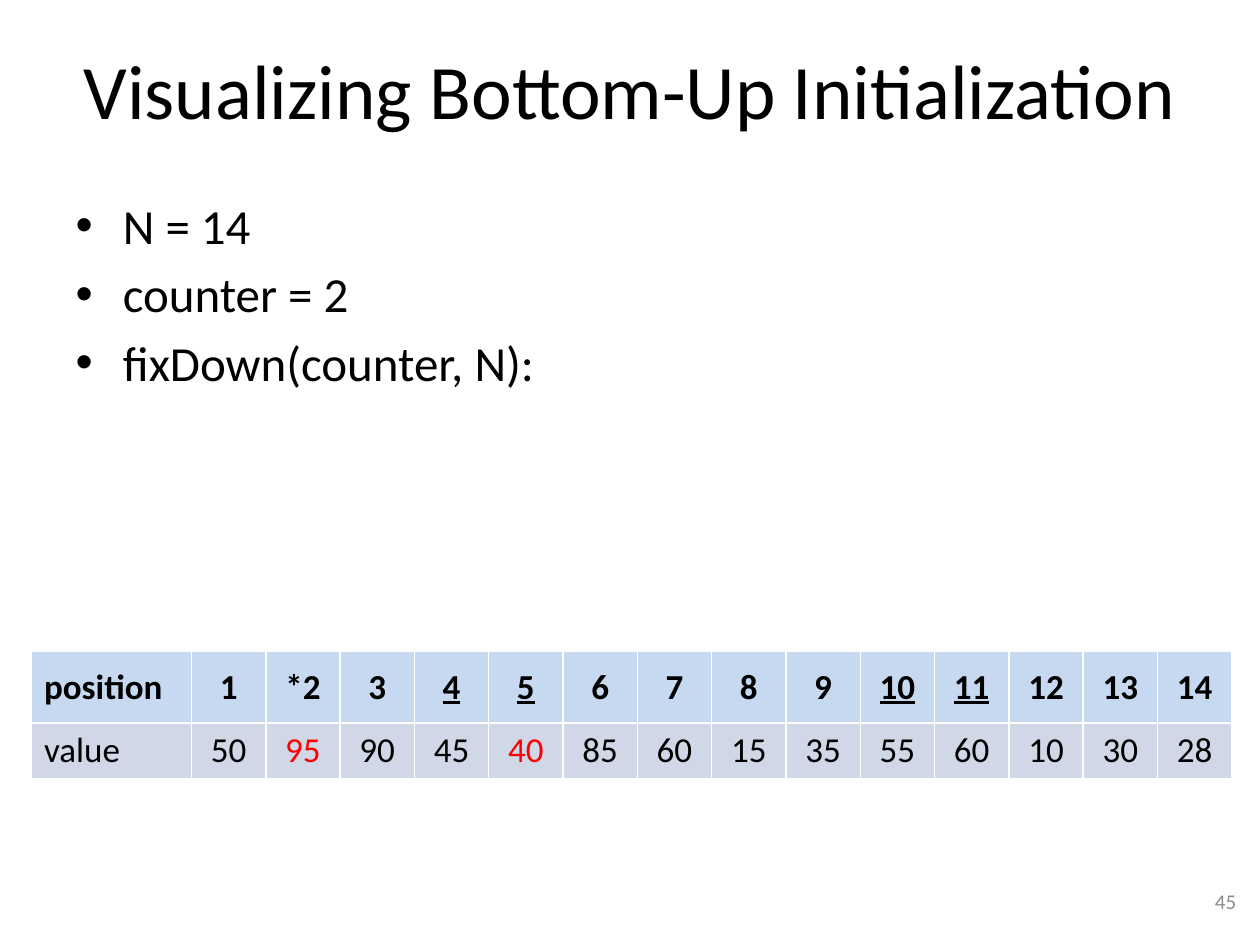
from pptx import Presentation
from pptx.dml.color import RGBColor
from pptx.enum.text import MSO_ANCHOR, PP_ALIGN
from pptx.util import Inches, Pt

LEFT, CENTER, RIGHT = PP_ALIGN.LEFT, PP_ALIGN.CENTER, PP_ALIGN.RIGHT
MIDDLE = MSO_ANCHOR.MIDDLE
FONT = "Calibri"
BLACK, RED, GRAY = "000000", "FF0000", "8C8C8C"
HEADER_FILL, VALUE_FILL = "C6D9F1", "D0D8E8"

BULLETS = ["N = 14", "counter = 2", "fixDown(counter, N):"]
POSITIONS = ["1", "*2", "3", "4", "5", "6", "7", "8", "9", "10", "11", "12", "13", "14"]
VALUES = [50, 95, 90, 45, 40, 85, 60, 15, 35, 55, 60, 10, 30, 28]
UNDERLINED_COLUMNS = {4, 5, 10, 11}
RED_COLUMNS = {2, 5}
LABEL_WIDTH, VALUE_WIDTH = 1.27, 0.59
ROW_HEIGHTS = [0.57, 0.44]


def color(value):
    """Return the colour for a hex string."""
    return RGBColor.from_string(value)


def format_paragraph(paragraph, size, font_color=BLACK, alignment=LEFT):
    """Set the font and alignment of a paragraph."""
    paragraph.alignment = alignment
    paragraph.font.name = FONT
    paragraph.font.size = Pt(size)
    paragraph.font.color.rgb = color(font_color)


def place(shape, left, top, width, height):
    """Move and size a shape, in inches."""
    shape.left, shape.top = Inches(left), Inches(top)
    shape.width, shape.height = Inches(width), Inches(height)


def fill_title(title, text):
    """Write the slide title."""
    place(title, 0.5, 0.08, 9, 1.25)
    title.text_frame.text = text
    title.text_frame.vertical_anchor = MIDDLE
    format_paragraph(title.text_frame.paragraphs[0], 44, alignment=CENTER)


def fill_bullets(body, lines):
    """Write the bulleted list."""
    place(body, 0.5, 1.5, 9, 2.58)
    body.text_frame.text = "\n".join(lines)
    for paragraph in body.text_frame.paragraphs:
        format_paragraph(paragraph, 28)


def fill_cell(cell, text, fill, font_color, alignment):
    """Write one table cell and return its paragraph font."""
    cell.text = text
    cell.vertical_anchor = MIDDLE
    cell.fill.solid()
    cell.fill.fore_color.rgb = color(fill)
    paragraph = cell.text_frame.paragraphs[0]
    format_paragraph(paragraph, 20, font_color, alignment)
    return paragraph.font


def add_heap_table(slide):
    """Add the table of heap positions and values."""
    headers = ["position", *POSITIONS]
    values = ["value", *map(str, VALUES)]
    frame = slide.shapes.add_table(
        2, len(headers), Inches(0.25), Inches(5.17),
        Inches(LABEL_WIDTH + VALUE_WIDTH * len(VALUES)), Inches(sum(ROW_HEIGHTS)))
    table = frame.table
    for row, height in zip(table.rows, ROW_HEIGHTS):
        row.height = Inches(height)
    for index, (header, value) in enumerate(zip(headers, values)):
        table.columns[index].width = Inches(VALUE_WIDTH if index else LABEL_WIDTH)
        alignment = CENTER if index else LEFT
        header_font = fill_cell(table.cell(0, index), header, HEADER_FILL, BLACK, alignment)
        header_font.bold = True
        header_font.underline = index in UNDERLINED_COLUMNS
        value_color = RED if index in RED_COLUMNS else BLACK
        fill_cell(table.cell(1, index), value, VALUE_FILL, value_color, alignment)


def add_slide_number(slide, number):
    """Add the slide number at the bottom right."""
    box = slide.shapes.add_textbox(Inches(7.58), Inches(6.95), Inches(2.33), Inches(0.4))
    box.text_frame.word_wrap = True
    box.text_frame.vertical_anchor = MIDDLE
    box.text_frame.text = number
    format_paragraph(box.text_frame.paragraphs[0], 12, GRAY, RIGHT)


def main():
    """Build and save the presentation."""
    presentation = Presentation()
    presentation.slide_width, presentation.slide_height = Inches(10), Inches(7.5)
    slide = presentation.slides.add_slide(presentation.slide_layouts[1])
    fill_title(slide.shapes.title, "Visualizing Bottom-Up Initialization")
    fill_bullets(slide.placeholders[1], BULLETS)
    add_slide_number(slide, "45")
    add_heap_table(slide)
    presentation.save("out.pptx")


if __name__ == "__main__":
    main()
